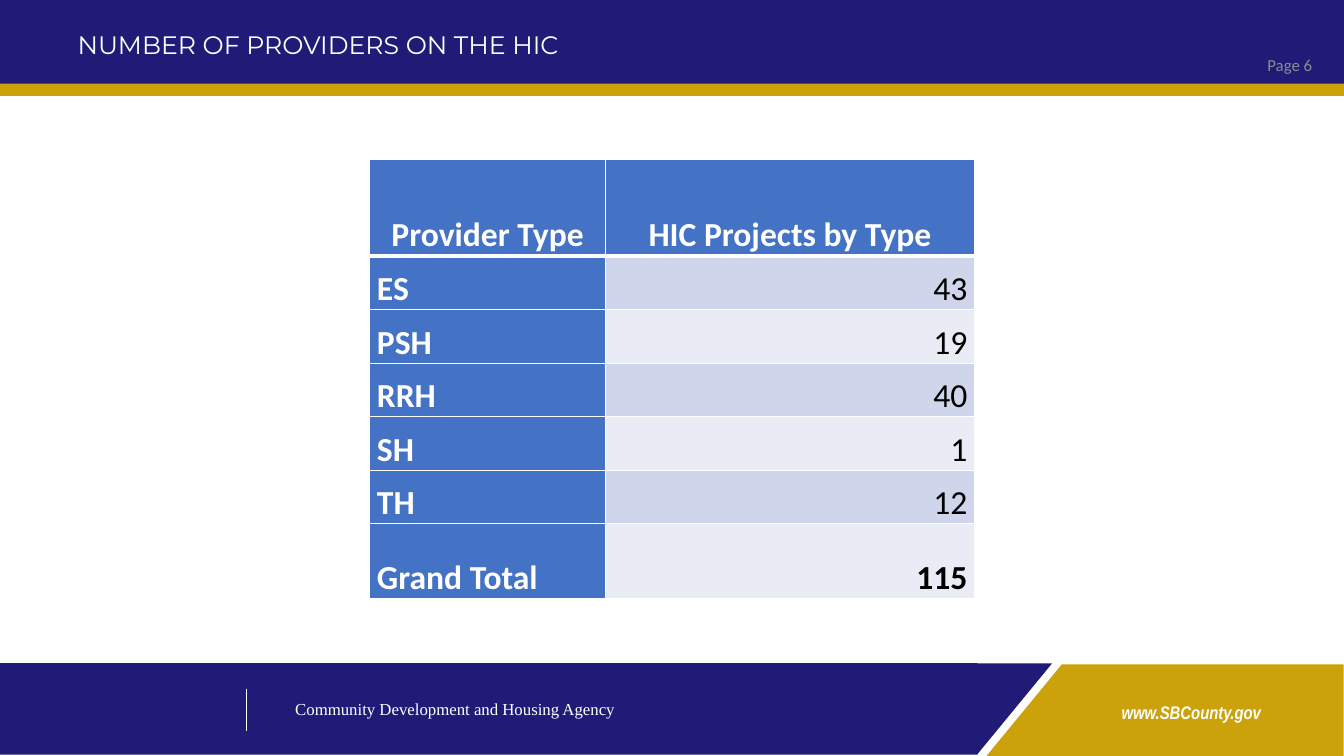
from lxml import etree
from pptx import Presentation
from pptx.dml.color import RGBColor
from pptx.enum.shapes import MSO_CONNECTOR, MSO_SHAPE
from pptx.enum.text import MSO_ANCHOR, MSO_AUTO_SIZE, PP_ALIGN
from pptx.oxml.ns import qn
from pptx.util import Cm, Pt

RECTANGLE, TRIANGLE = MSO_SHAPE.RECTANGLE, MSO_SHAPE.RIGHT_TRIANGLE
STRAIGHT = MSO_CONNECTOR.STRAIGHT
TOP, MIDDLE, BOTTOM = MSO_ANCHOR.TOP, MSO_ANCHOR.MIDDLE, MSO_ANCHOR.BOTTOM
LEFT, CENTER, RIGHT = PP_ALIGN.LEFT, PP_ALIGN.CENTER, PP_ALIGN.RIGHT
NO_FIT = MSO_AUTO_SIZE.NONE

NAVY, GOLD, BLUE = "1F1B77", "CCA20A", "4472C4"
WHITE, BLACK, GRAY = "FFFFFF", "000000", "8C8C8C"
BANDS = ("CFD5EA", "E9EBF5")

PROVIDERS = [
    ("Provider Type", "HIC Projects by Type"),
    ("ES", "43"),
    ("PSH", "19"),
    ("RRH", "40"),
    ("SH", "1"),
    ("TH", "12"),
    ("Grand Total", "115"),
]
COLUMN_WIDTHS = (5.94, 9.3)
ROW_HEIGHTS = (2.44, 1.35, 1.35, 1.35, 1.35, 1.35, 1.88)


def rgb(color):
    return RGBColor.from_string(color)


def paint(fill, color):
    fill.solid()
    fill.fore_color.rgb = rgb(color)


def write(frame, text, font, size, color, align=LEFT, bold=False, italic=False):
    paragraph = frame.paragraphs[0]
    paragraph.alignment = align
    run = paragraph.add_run()
    run.text = text
    run.font.name = font
    run.font.size = Pt(size)
    run.font.bold = bold
    run.font.italic = italic
    run.font.color.rgb = rgb(color)


def add_panel(slide, preset, box, color, rotation=0):
    panel = slide.shapes.add_shape(preset, *map(Cm, box))
    panel.shadow.inherit = False
    panel.rotation = rotation
    paint(panel.fill, color)
    panel.line.fill.background()


def add_label(slide, box, text, font, size, color, anchor=TOP, **style):
    frame = slide.shapes.add_textbox(*map(Cm, box)).text_frame
    frame.word_wrap = True
    frame.vertical_anchor = anchor
    write(frame, text, font, size, color, **style)


def add_divider(slide, x, top, bottom):
    divider = slide.shapes.add_connector(STRAIGHT, Cm(x), Cm(top), Cm(x), Cm(bottom))
    divider.line.color.rgb = rgb(WHITE)
    divider.line.width = Pt(0.25)
    etree.SubElement(divider._element.spPr, qn("a:effectLst"))


def set_title(slide, text):
    title = slide.shapes.title
    title.left, title.top, title.width, title.height = map(Cm, (1.7, -0.43, 30.48, 3.18))
    title.text_frame.auto_size = NO_FIT
    title.text_frame.vertical_anchor = MIDDLE
    write(title.text_frame, text, "Montserrat", 18, WHITE)
    title.text_frame.paragraphs[0].line_spacing = 0.9
    # The title lies in front of the header band.
    slide.shapes._spTree.append(title._element)


def set_borders(cell, top, bottom):
    """Draw white borders; top and bottom are widths in points."""
    properties = cell._tc.get_or_add_tcPr()
    for side, width in (("L", 1), ("R", 1), ("T", top), ("B", bottom)):
        border = etree.SubElement(properties, qn(f"a:ln{side}"), w=str(Pt(width)))
        solid = etree.SubElement(border, qn("a:solidFill"))
        etree.SubElement(solid, qn("a:srgbClr"), val=WHITE)


def fill_cell(cell, text, row, column):
    is_header, is_label = row == 0, column == 0
    is_total = row == len(PROVIDERS) - 1
    on_blue = is_header or is_label
    set_borders(cell, top=3 if row == 1 else 1, bottom=3 if is_header else 1)
    paint(cell.fill, BLUE if on_blue else BANDS[(row - 1) % 2])
    cell.vertical_anchor = BOTTOM
    cell.margin_left = cell.margin_right = Cm(0.18)
    cell.margin_top = cell.margin_bottom = 0
    align = CENTER if is_header else LEFT if is_label else RIGHT
    write(cell.text_frame, text, "Calibri", 24, WHITE if on_blue else BLACK,
          align, bold=on_blue or is_total)


def add_provider_table(slide):
    table = slide.shapes.add_table(
        len(PROVIDERS), len(COLUMN_WIDTHS), Cm(9.32), Cm(4.01),
        Cm(sum(COLUMN_WIDTHS)), Cm(sum(ROW_HEIGHTS))).table
    for column, width in zip(table.columns, COLUMN_WIDTHS):
        column.width = Cm(width)
    for row, height in zip(table.rows, ROW_HEIGHTS):
        row.height = Cm(height)
    for r, texts in enumerate(PROVIDERS):
        for c, text in enumerate(texts):
            fill_cell(table.cell(r, c), text, r, c)


def add_header(slide):
    add_panel(slide, RECTANGLE, (0, 2.01, 33.91, 0.41), GOLD)
    add_panel(slide, RECTANGLE, (0, 0, 33.91, 2.11), NAVY)
    add_label(slide, (29.36, 1.12, 3.96, 1.02), "Page 6", "Calibri", 12, GRAY,
              MIDDLE, align=RIGHT)
    set_title(slide, "NUMBER OF PROVIDERS ON THE HIC")


def add_footer(slide):
    add_panel(slide, RECTANGLE, (26.77, 16.74, 7.09, 2.31), GOLD)
    add_panel(slide, TRIANGLE, (24.66, 16.94, 2.31, 1.9), GOLD, 270)
    add_panel(slide, RECTANGLE, (-0.03, 16.71, 24.66, 2.31), NAVY)
    add_panel(slide, TRIANGLE, (24.41, 16.92, 2.31, 1.9), NAVY, 90)
    add_divider(slide, 6.2, 17.35, 18.42)
    add_label(slide, (26.21, 17.55, 7.62, 0.81), "www.SBCounty.gov", "Arial Narrow",
              13, WHITE, align=CENTER, bold=True, italic=True)
    add_label(slide, (7.19, 17.48, 13.41, 1.14), "Community Development and Housing Agency",
              "Times New Roman", 12, WHITE)


def main():
    presentation = Presentation()
    presentation.slide_width, presentation.slide_height = Cm(33.87), Cm(19.05)
    title_only = presentation.slide_layouts[5]
    slide = presentation.slides.add_slide(title_only)
    add_header(slide)
    add_footer(slide)
    add_provider_table(slide)
    presentation.save("out.pptx")


if __name__ == "__main__":
    main()
